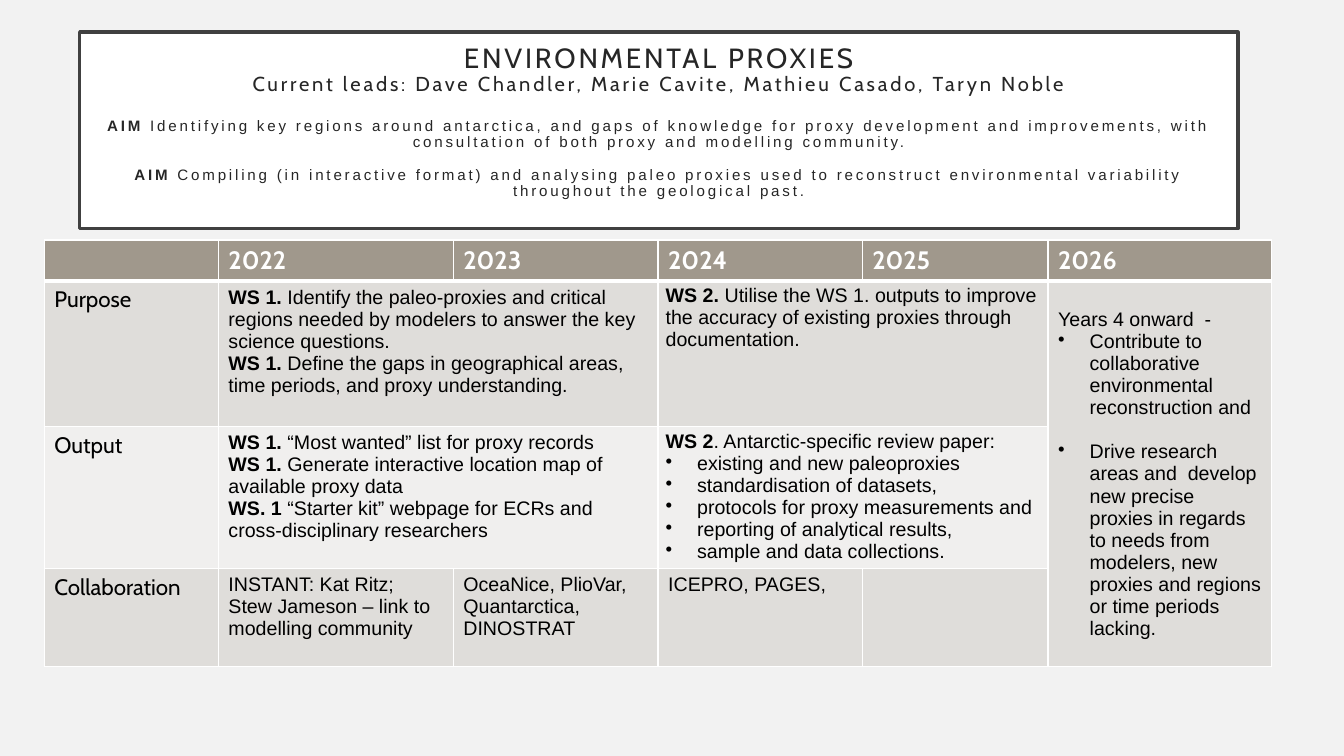
from lxml import etree
from pptx import Presentation
from pptx.dml.color import RGBColor
from pptx.enum.shapes import MSO_SHAPE as Preset
from pptx.enum.text import MSO_ANCHOR as Anchor, PP_ALIGN as Align
from pptx.oxml import parse_xml
from pptx.oxml.ns import nsdecls, qn
from pptx.util import Pt


def rgb(value):
    return RGBColor.from_string(value)


def write(paragraph, text, font, size, color):
    paragraph.font.name = font
    paragraph.font.size = Pt(size)
    paragraph.font.color.rgb = rgb(color)
    lead, bar, rest = text.rpartition("|")
    if lead:
        paragraph.add_run().text = lead
        paragraph.runs[0].font.bold = True
    paragraph.add_run().text = rest


deck = Presentation()
deck.slide_width, deck.slide_height = Pt(960), Pt(540)
slide = deck.slides.add_slide(deck.slide_layouts[6])
slide.background.fill.solid()
slide.background.fill.fore_color.rgb = rgb("F2F2F2")

heading = slide.shapes.add_shape(Preset.RECTANGLE, Pt(56.9), Pt(23), Pt(827.3), Pt(140.4))
heading.shadow.inherit = False
heading.fill.solid()
heading.fill.fore_color.rgb = rgb("FFFFFF")
heading.line.color.rgb = rgb("404040")
heading.line.width = Pt(2.5)
frame = heading.text_frame
frame.word_wrap = True
frame.vertical_anchor = Anchor.TOP
frame.margin_left = frame.margin_right = Pt(14.4)
frame.margin_top = Pt(8.6)

heading_lines = [
    ("ENVIRONMENTAL PROXIES", "Cabin", 19.8, 0),
    ("Current leads: Dave Chandler, Marie Cavite, Mathieu Casado, Taryn Noble", "Cabin", 14.4, 0),
    ("AIM |Identifying key regions around antarctica, and gaps of knowledge for proxy development "
     "and improvements, with consultation of both proxy and modelling community.", "Arial", 10.8, 16),
    ("AIM |Compiling (in interactive format) and analysing paleo proxies used to reconstruct "
     "environmental variability throughout the geological past.", "Arial", 10.8, 11.5),
]
for index, (text, font, size, gap) in enumerate(heading_lines):
    line = frame.add_paragraph() if index else frame.paragraphs[0]
    line.alignment = Align.CENTER
    line.line_spacing = 0.9
    line.space_before = Pt(gap)
    write(line, text, font, size, "262626")
    for run in line.runs:
        run.font._element.set("spc", "200")

widths = [124.3, 167.8, 146.3, 145.8, 132.8, 159.6]
heights = [29.5, 104, 101.4, 70]
plan = slide.shapes.add_table(
    len(heights), len(widths), Pt(31.7), Pt(171.4), Pt(sum(widths)), Pt(sum(heights))).table
for column, width in zip(plan.columns, widths):
    column.width = Pt(width)
for row, height in zip(plan.rows, heights):
    row.height = Pt(height)

row_fills = ["A0988C", "DFDDDA", "F0EFEE", "DFDDDA"]
for r, fill in enumerate(row_fills):
    for c in range(len(widths)):
        cell = plan.cell(r, c)
        properties = cell._tc.get_or_add_tcPr()
        for side in "LRTB":
            thick = (r, side) in [(0, "B"), (1, "T")]
            border = parse_xml(f'<a:ln{side} {nsdecls("a")} w="{Pt(3 if thick else 1)}"><a:solidFill>'
                               f'<a:srgbClr val="FFFFFF"/></a:solidFill></a:ln{side}>')
            properties.append(border)
        cell.fill.solid()
        cell.fill.fore_color.rgb = rgb(fill)

for first, last in [((1, 1), (1, 2)), ((1, 3), (1, 4)), ((2, 1), (2, 2)),
                    ((2, 3), (2, 4)), ((1, 5), (3, 5))]:
    plan.cell(*first).merge(plan.cell(*last))

for c, year in enumerate(range(2022, 2027), 1):
    label = plan.cell(0, c).text_frame.paragraphs[0]
    write(label, str(year), "Cabin", 18, "FFFFFF")
    label.font.bold = True
for r, topic in enumerate(["Purpose", "Output", "Collaboration"], 1):
    write(plan.cell(r, 0).text_frame.paragraphs[0], topic, "Cabin", 16, "000000")

entries = {
    (1, 1): ["WS 1.| Identify the paleo-proxies and critical regions needed by modelers "
             "to answer the key science questions.",
             "WS 1.| Define the gaps in geographical areas, time periods, and proxy understanding."],
    (1, 3): ["WS 2. |Utilise the WS 1. outputs to improve the accuracy of existing proxies "
             "through documentation."],
    (1, 5): ["Years 4 onward  -",
             "•Contribute to collaborative environmental reconstruction and",
             "•Drive research areas and  develop new precise proxies in regards to needs "
             "from modelers, new proxies and regions or time periods lacking."],
    (2, 1): ["WS 1.| “Most wanted” list for proxy records",
             "WS 1.| Generate interactive location map of available proxy data",
             "WS. 1| “Starter kit” webpage for ECRs and cross-disciplinary researchers"],
    (2, 3): ["WS 2|. Antarctic-specific review paper:",
             "•existing and new paleoproxies",
             "•standardisation of datasets,",
             "•protocols for proxy measurements and",
             "•reporting of analytical results,",
             "•sample and data collections."],
    (3, 1): ["INSTANT: Kat Ritz; Stew Jameson – link to modelling community"],
    (3, 2): ["OceaNice, PlioVar, Quantarctica, DINOSTRAT"],
    (3, 3): ["ICEPRO, PAGES,"],
}
for position, texts in entries.items():
    body = plan.cell(*position).text_frame
    for index, text in enumerate(texts):
        item = body.add_paragraph() if index else body.paragraphs[0]
        write(item, text.removeprefix("•"), "Arial", 14, "000000")
        if text.startswith("•"):
            layout = item._p.get_or_add_pPr()
            layout.set("marL", str(Pt(22.5)))
            layout.set("indent", str(Pt(-22.5)))
            bullet = etree.Element(qn("a:buChar"), char="•")
            layout.find(qn("a:defRPr")).addprevious(bullet)

for r in (1, 2):
    workshop = plan.cell(r, 3)
    workshop.margin_left = workshop.margin_right = Pt(5.4)
    workshop.margin_top = workshop.margin_bottom = Pt(2.7)
outlook = plan.cell(1, 5)
outlook.vertical_anchor = Anchor.MIDDLE
outlook.text_frame.paragraphs[2].space_before = Pt(16)

deck.save("out.pptx")
